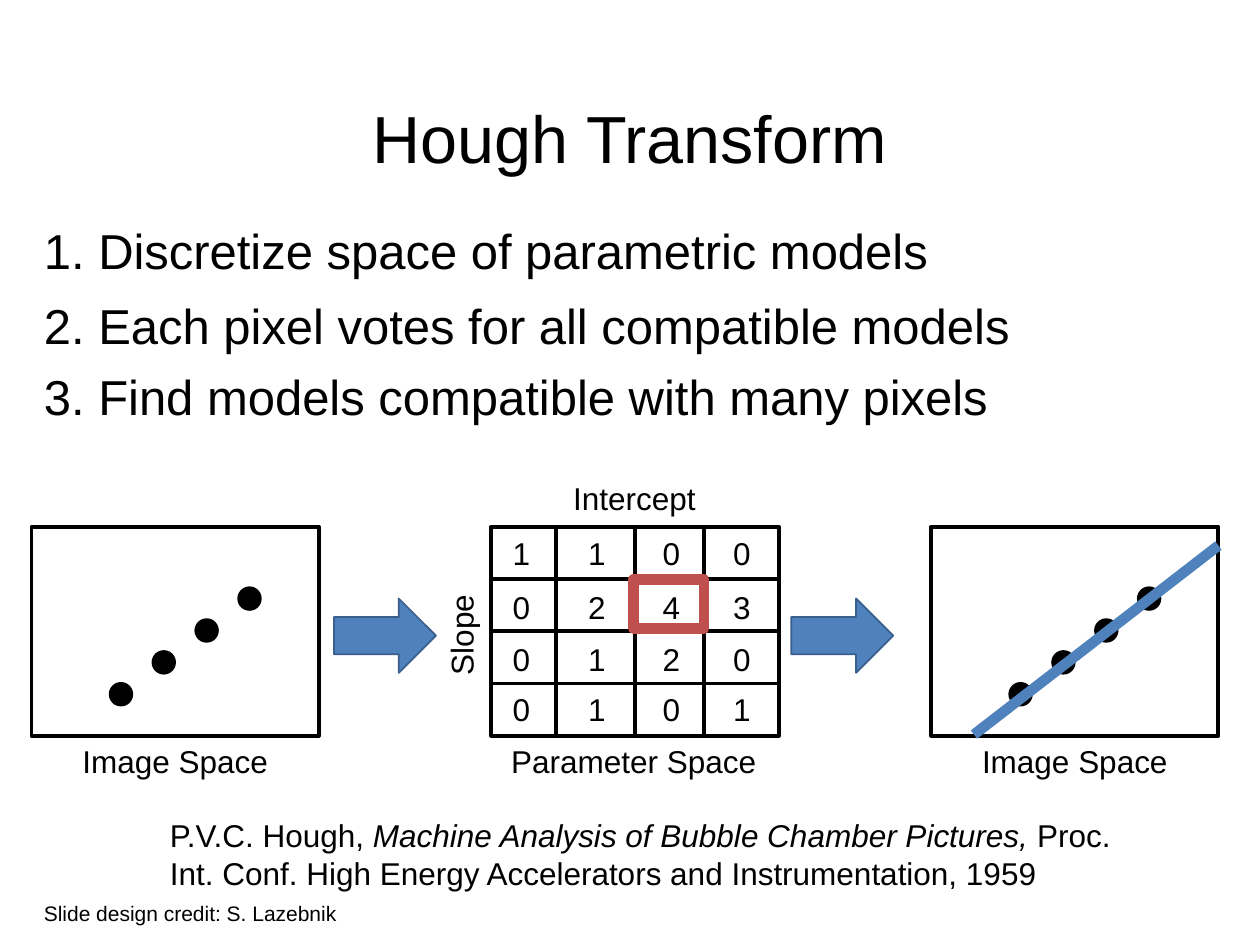
from dataclasses import dataclass
from typing import Optional

from lxml.etree import SubElement
from pptx import Presentation
from pptx.dml.color import RGBColor
from pptx.enum.shapes import MSO_CONNECTOR as Connector, MSO_SHAPE as Preset
from pptx.enum.text import MSO_ANCHOR as Anchor, MSO_AUTO_SIZE as AutoSize, PP_ALIGN as Align
from pptx.oxml.ns import qn
from pptx.util import Inches, Pt

BLACK = RGBColor(0x00, 0x00, 0x00)
WHITE = RGBColor(0xFF, 0xFF, 0xFF)
BLUE = RGBColor(0x4F, 0x81, 0xBD)
DARK_BLUE = RGBColor(0x3A, 0x5F, 0x8C)
RED = RGBColor(0xC0, 0x50, 0x4D)

SLIDE_WIDTH, SLIDE_HEIGHT = Inches(10), Inches(7.5)
COLUMN, ROW = SLIDE_WIDTH / 100, SLIDE_HEIGHT / 75
FRAME_TOP, FRAME_WIDTH, FRAME_HEIGHT = 41.8, 22.8, 16.6
LEFT_FRAME, VOTE_FRAME, RIGHT_FRAME = 2.5, 39, 73.9
FRAME_BOTTOM = FRAME_TOP + FRAME_HEIGHT
VOTES = ((1, 1, 0, 0), (0, 2, 4, 3), (0, 1, 2, 0), (0, 1, 0, 1))
VOTE_LEFTS = (39.7, 45.7, 51.6, 57.2)
VOTE_TOPS = (41.9, 46.2, 50.3, 54.3)
DIVIDER_COLUMNS = (44.1, 50.4, 55.9)
STEPS = (
    (17, "1. Discretize space of parametric models"),
    (23, "2. Each pixel votes for all compatible models"),
    (28.6, "3. Find models compatible with many pixels"),
)


@dataclass(frozen=True)
class Box:
    """A rectangle in grid columns and rows."""

    left: float
    top: float
    width: float
    height: float

    def lengths(self) -> tuple:
        """Return left, top, width and height as slide lengths."""
        return (round(self.left * COLUMN), round(self.top * ROW),
                round(self.width * COLUMN), round(self.height * ROW))


@dataclass(frozen=True)
class Label:
    """A text with its box and style."""

    text: str
    box: Box
    size: float = 18
    align: Align = Align.LEFT
    anchor: Anchor = Anchor.TOP
    rotation: float = 0
    grows: bool = True


def add_label(slide, label: Label):
    """Draw a text box and return it."""
    shape = slide.shapes.add_textbox(*label.box.lengths())
    shape.rotation = label.rotation
    frame = shape.text_frame
    frame.text = label.text
    frame.word_wrap = True
    frame.auto_size = AutoSize.SHAPE_TO_FIT_TEXT if label.grows else AutoSize.NONE
    frame.vertical_anchor = label.anchor
    paragraph = frame.paragraphs[0]
    paragraph.alignment = label.align
    for run in paragraph.runs:
        style_run(run, label.size)
    return shape


def style_run(run, size: float, italic: bool = False) -> None:
    """Set the font of a run."""
    run.font.name = "Arial"
    run.font.size = Pt(size)
    run.font.color.rgb = BLACK
    run.font.italic = italic


def add_preset(slide, preset: Preset, box: Box, line: RGBColor, weight: float,
               fill: Optional[RGBColor] = None):
    """Draw an outlined preset shape and return it."""
    shape = slide.shapes.add_shape(preset, *box.lengths())
    shape.shadow.inherit = False
    if fill is None:
        shape.fill.background()
    else:
        shape.fill.solid()
        shape.fill.fore_color.rgb = fill
    shape.line.color.rgb = line
    shape.line.width = Pt(weight)
    return shape


def add_line(slide, start: tuple, end: tuple, color: RGBColor = BLACK, weight: float = 2.25):
    """Draw a straight connector between two grid points."""
    connector = slide.shapes.add_connector(
        Connector.STRAIGHT, round(start[0] * COLUMN), round(start[1] * ROW),
        round(end[0] * COLUMN), round(end[1] * ROW))
    connector.line.color.rgb = color
    connector.line.width = Pt(weight)
    SubElement(connector.element.spPr, qn("a:effectLst"))
    return connector


def add_caption(slide, text: str, left: float) -> None:
    """Write a centred caption under a frame."""
    add_label(slide, Label(text, Box(left, FRAME_BOTTOM, FRAME_WIDTH, 4), align=Align.CENTER))


def add_image_space(slide, left: float) -> None:
    """Draw a frame with four pixels on a diagonal."""
    frame = Box(left, FRAME_TOP, FRAME_WIDTH, FRAME_HEIGHT)
    add_preset(slide, Preset.RECTANGLE, frame, BLACK, 2.25)
    for index in range(4):
        pixel = Box(left + 6.2 + 3.4 * index, 54.2 - 2.53 * index, 1.8, 1.8)
        add_preset(slide, Preset.OVAL, pixel, BLACK, 1, BLACK)
    add_caption(slide, "Image Space", left)


def add_parameter_space(slide) -> None:
    """Draw the grid of votes with its axis names."""
    frame = Box(VOTE_FRAME, FRAME_TOP, FRAME_WIDTH, FRAME_HEIGHT)
    rectangle = add_preset(slide, Preset.RECTANGLE, frame, BLACK, 2.25, WHITE)
    columns = [add_line(slide, (x, FRAME_TOP), (x, FRAME_BOTTOM)) for x in DIVIDER_COLUMNS]
    heights = [FRAME_TOP + FRAME_HEIGHT * index / 4 for index in (1, 2, 3)]
    rows = [add_line(slide, (VOTE_FRAME, y), (VOTE_FRAME + FRAME_WIDTH, y)) for y in heights]
    for connector, first, last in ((columns[1], 0, 2), (rows[1], 1, 3)):
        connector.begin_connect(rectangle, first)
        connector.end_connect(rectangle, last)
    for top, votes in zip(VOTE_TOPS, VOTES):
        for left, vote in zip(VOTE_LEFTS, votes):
            add_label(slide, Label(str(vote), Box(left, top, 3.5, 4)))
    add_caption(slide, "Parameter Space", VOTE_FRAME - 0.1)
    add_label(slide, Label("Slope", Box(31, 48.4, 11.2, 4), align=Align.CENTER, rotation=270))
    add_label(slide, Label("Intercept", Box(42.9, 37.5, 14.9, 4), align=Align.CENTER))
    add_preset(slide, Preset.RECTANGLE, Box(50.3, 46, 5.6, 3.9), RED, 6)


def add_citation(slide) -> None:
    """Write the reference with its title in italics."""
    shape = add_label(slide, Label("", Box(12.5, 64.3, 78, 7), anchor=Anchor.MIDDLE))
    paragraph = shape.text_frame.paragraphs[0]
    parts = (
        ("P.V.C. Hough, ", False),
        ("Machine Analysis of Bubble Chamber Pictures,", True),
        (" Proc. Int. Conf. High Energy Accelerators and Instrumentation, 1959", False),
    )
    for text, italic in parts:
        run = paragraph.add_run()
        run.text = text
        style_run(run, 18, italic)


def main() -> None:
    """Build the slide and save it."""
    presentation = Presentation()
    presentation.slide_width, presentation.slide_height = SLIDE_WIDTH, SLIDE_HEIGHT
    slide = presentation.slides.add_slide(presentation.slide_layouts[6])
    title = add_label(slide, Label("Hough Transform", Box(6.9, 4, 86.2, 14.5), 38,
                                   Align.CENTER, Anchor.MIDDLE, grows=False))
    title.text_frame.paragraphs[0].line_spacing = 0.9
    for top, text in STEPS:
        add_label(slide, Label(text, Box(2.5, top, 94.2, 5.7), 28))
    add_image_space(slide, LEFT_FRAME)
    add_parameter_space(slide)
    add_image_space(slide, RIGHT_FRAME)
    add_line(slide, (77.3, 58.3), (96.7, 43.3), BLUE, 6)
    for left in (26.5, 62.8):
        add_preset(slide, Preset.RIGHT_ARROW, Box(left, 47.5, 8.1, 5.9), DARK_BLUE, 1, BLUE)
    add_citation(slide)
    add_label(slide, Label("Slide design credit: S. Lazebnik", Box(2.5, 71, 33.3, 3), 12))
    presentation.save("out.pptx")


if __name__ == "__main__":
    main()
